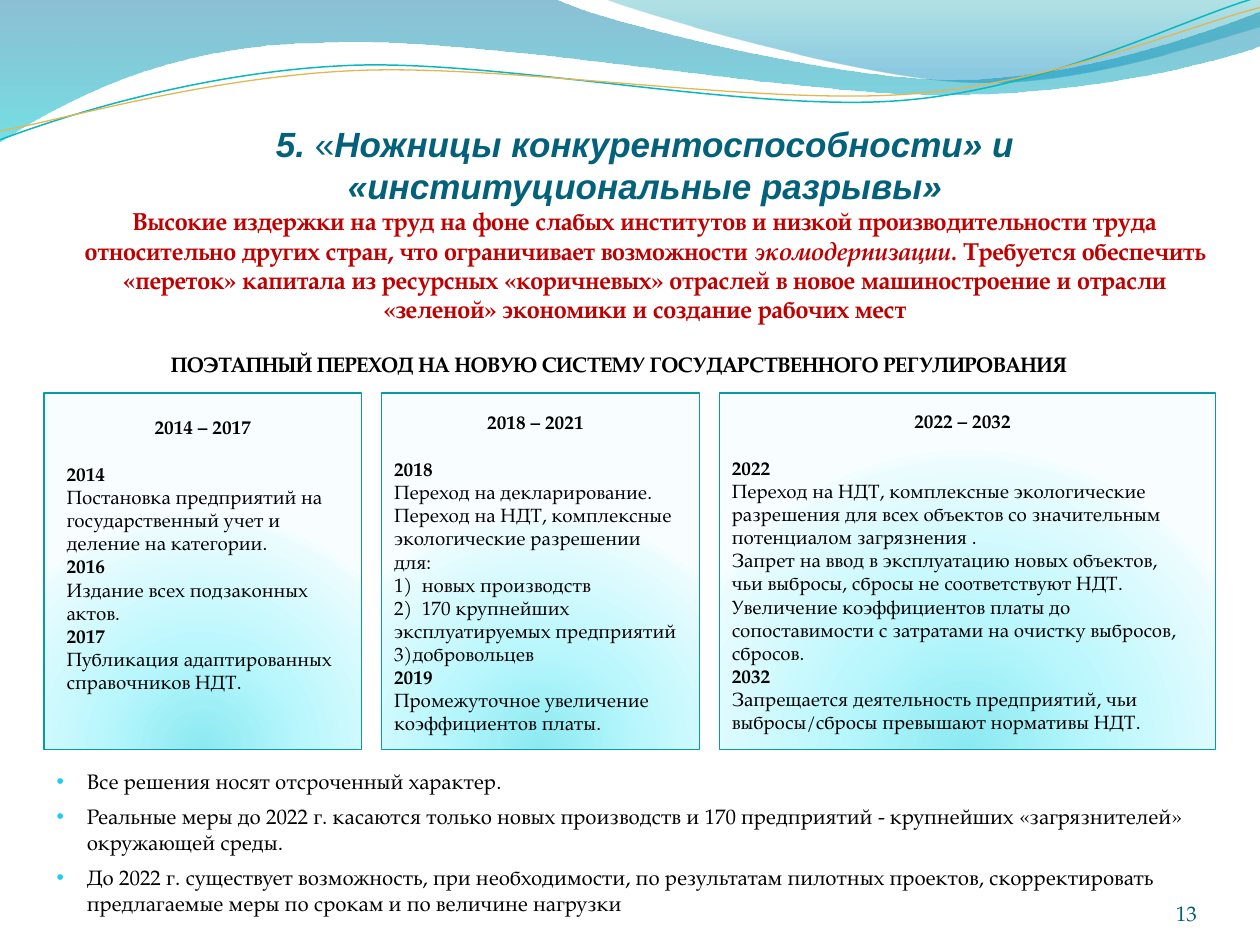
from lxml import etree
from pptx import Presentation
from pptx.dml.color import RGBColor
from pptx.enum.shapes import MSO_SHAPE
from pptx.enum.text import MSO_ANCHOR as Anchor, MSO_AUTO_SIZE as AutoSize, PP_ALIGN as Align
from pptx.oxml.ns import qn
from pptx.util import Inches, Pt

SERIF, SANS = "TeX Gyre Pagella", "Arial"
BLACK = RGBColor(0, 0, 0)
TITLE_BLUE = RGBColor(0x04, 0x61, 0x7B)
NUMBER_BLUE = RGBColor(0x04, 0x5D, 0x75)
RED = RGBColor(0xC0, 0, 0)
BORDER = RGBColor(0x06, 0x9C, 0xA3)
BULLET = RGBColor(0x20, 0xC9, 0xF8)
TEAL_LINE = RGBColor(0x0A, 0xB8, 0xBF)
GOLD_LINE = RGBColor(0xE3, 0xB6, 0x53)

# Gradient stops: position in percent, colour, opacity in percent
PANEL_STOPS = [(0, RGBColor(0x8B, 0xE9, 0xF1), 100), (43, RGBColor(0xB9, 0xF7, 0xFD), 100),
               (93, RGBColor(0xEA, 0xFC, 0xFE), 100), (100, RGBColor(0xF8, 0xFE, 0xFF), 100)]
LEFT_WAVE_STOPS = [(0, RGBColor(0, 0x74, 0xA1), 45), (100, RGBColor(0, 0xC6, 0xCF), 55)]
RIGHT_WAVE_STOPS = [(0, RGBColor(0, 0xA1, 0xA9), 30), (80, RGBColor(0, 0x8B, 0xBF), 45)]

# Outlines: a pair is a straight step, six numbers are a Bezier curve
LEFT_WAVE = [(0, -0.01), (4.4, -0.01), (4.76, 0.17, 6.64, 0.63, 7.58, 0.63),
             (8.53, 0.63, 9.58, 0.26, 10, 0.09), (10.01, 0.36),
             (9.83, 0.44, 8.7, 0.76, 7.46, 0.75), (6.22, 0.75, 3.82, 0.28, 2.57, 0.34),
             (1.29, 0.35, 0.46, 0.83, -0.01, 1.13)]
RIGHT_WAVE = [(4.79, -0.01), (5.09, 0.11, 6.82, 0.62, 7.69, 0.65),
              (8.56, 0.69, 9.61, 0.32, 10, 0.21), (10, 0)]
TEAL_CURVE = [(0, 1.11), (0.48, 0.93, 1.58, 0.57, 2.77, 0.52),
              (3.95, 0.47, 5.93, 0.89, 7.13, 0.8), (8.33, 0.71, 9.38, 0.15, 9.98, -0.02)]
GOLD_CURVE = [(0, 1.04), (0.47, 0.96, 1.64, 0.61, 2.83, 0.56),
              (4.03, 0.51, 5.97, 0.83, 7.17, 0.75), (8.36, 0.67, 9.41, 0.21, 10, 0.06)]

PANELS = [(5.71, 3.12, 3.94, 2.83), (3.03, 3.12, 2.52, 2.83), (0.35, 3.12, 2.52, 2.83)]
STAGES = [  # text box, period, {year: measures}
    ((0.43, 3.24, 2.36, 2.32), "2014 – 2017", {
        "2014": ["Постановка предприятий на государственный учет и деление на категории."],
        "2016": ["Издание всех подзаконных актов."],
        "2017": ["Публикация адаптированных справочников НДТ."]}),
    ((3.03, 3.2, 2.44, 2.69), "2018 – 2021", {
        "2018": ["Переход на декларирование.",
                 "Переход на НДТ, комплексные экологические разрешении для:",
                 "1)\tновых производств",
                 "2)\t170 крупнейших эксплуатируемых предприятий",
                 "3)добровольцев"],
        "2019": ["Промежуточное увеличение коэффициентов платы."]}),
    ((5.71, 3.19, 3.86, 2.69), "2022 – 2032", {
        "2022": ["Переход на НДТ, комплексные экологические разрешения для всех объектов "
                 "со значительным потенциалом загрязнения .",
                 "Запрет на ввод в эксплуатацию новых объектов, чьи выбросы, сбросы "
                 "не соответствуют НДТ.",
                 "Увеличение коэффициентов платы до сопоставимости с затратами "
                 "на очистку выбросов, сбросов."],
        "2032": ["Запрещается деятельность предприятий, чьи выбросы/сбросы "
                 "превышают нормативы НДТ."]}),
]
CONCLUSIONS = [
    "Все решения носят отсроченный характер.",
    "Реальные меры до 2022 г. касаются только новых производств и 170 предприятий - "
    "крупнейших «загрязнителей» окружающей среды.",
    "До 2022 г. существует возможность, при необходимости, по результатам пилотных проектов, "
    "скорректировать предлагаемые меры по срокам и по величине нагрузки",
]


def add_element(parent, tag, **attributes):
    return etree.SubElement(parent, qn(tag), {k: str(v) for k, v in attributes.items()})


def fill_gradient(shape, stops, radial=False):
    """Fill downwards, or radially from a point below the shape."""
    shape.fill.gradient()
    gradient = shape._element.spPr.find(qn("a:gradFill"))
    for child in list(gradient):
        gradient.remove(child)
    stop_list = add_element(gradient, "a:gsLst")
    for position, color, opacity in stops:
        stop = add_element(stop_list, "a:gs", pos=position * 1000)
        tint = add_element(stop, "a:srgbClr", val=color)
        if opacity < 100:
            add_element(tint, "a:alpha", val=opacity * 1000)
    if radial:
        center = add_element(gradient, "a:path", path="circle")
        add_element(center, "a:fillToRect", l=50000, t=130000, r=50000, b=-30000)
    else:
        add_element(gradient, "a:lin", ang=5400000, scaled=0)


def add_outline(page, outline, closed):
    """Lay straight steps through all points, then join each curve's three into one Bezier."""
    points = [(Inches(part[i]), Inches(part[i + 1]))
              for part in outline for i in range(0, len(part), 2)]
    builder = page.shapes.build_freeform(*points[0])
    builder.add_line_segments(points[1:], close=closed)
    shape = builder.convert_to_shape()
    shape.shadow.inherit = False
    steps = iter(list(shape._element.iter(qn("a:lnTo"))))
    for part in outline[1:]:
        group = [next(steps) for _ in range(len(part) // 2)]
        if len(group) == 3:
            curve = etree.Element(qn("a:cubicBezTo"))
            group[0].addprevious(curve)
            for step in group:
                curve.append(step[0])
                step.getparent().remove(step)
    return shape


def add_waves(page):
    for outline, stops in ((LEFT_WAVE, LEFT_WAVE_STOPS), (RIGHT_WAVE, RIGHT_WAVE_STOPS)):
        wave = add_outline(page, outline, closed=True)
        fill_gradient(wave, stops)
        wave.line.fill.background()
    for outline, color, width in ((TEAL_CURVE, TEAL_LINE, 0.85), (GOLD_CURVE, GOLD_LINE, 0.75)):
        curve = add_outline(page, outline, closed=False)
        curve.fill.background()
        curve.line.color.rgb = color
        curve.line.width = Pt(width)


def add_box(page, box, anchor=Anchor.MIDDLE, insets=(0.1, 0.05, 0.1, 0.05), grow=True):
    frame = page.shapes.add_textbox(*map(Inches, box)).text_frame
    frame.word_wrap = True
    frame.auto_size = AutoSize.SHAPE_TO_FIT_TEXT if grow else AutoSize.NONE
    frame.vertical_anchor = anchor
    frame.margin_left, frame.margin_top, frame.margin_right, frame.margin_bottom = map(
        Inches, insets)
    return frame


def add_para(frame, align=Align.LEFT, before=0):
    first = frame.paragraphs[0]
    para = frame.add_paragraph() if first.runs else first
    para.alignment = align
    para.space_before = Pt(before)
    return para


def write(para, text, size=12, font=SERIF, color=BLACK, bold=False, italic=False):
    span = para.add_run()
    span.text = text
    span.font.size, span.font.name = Pt(size), font
    span.font.color.rgb = color
    span.font.bold, span.font.italic = bold, italic


def add_title(page, box):
    frame = add_box(page, box, Anchor.BOTTOM, (0, 0.05, 0, 0), grow=False)
    para = add_para(frame, Align.CENTER)
    heading = dict(size=20, font=SANS, color=TITLE_BLUE)
    write(para, "5. ", bold=True, italic=True, **heading)
    write(para, "«", **heading)
    write(para, "Ножницы конкурентоспособности» и «институциональные разрывы»",
          bold=True, italic=True, **heading)
    para.add_line_break()
    thesis = dict(size=14, color=RED, bold=True)
    write(para, "Высокие издержки на труд на фоне слабых институтов и низкой производительности "
          "труда относительно других стран, что ограничивает возможности ", **thesis)
    write(para, "экомодернизации. ", italic=True, **thesis)
    write(para, "Требуется обеспечить «переток» капитала из ресурсных «коричневых» отраслей в "
          "новое машиностроение и отрасли «зеленой» экономики и создание рабочих мест", **thesis)


def add_panel(page, box):
    panel = page.shapes.add_shape(MSO_SHAPE.RECTANGLE, *map(Inches, box))
    panel.shadow.inherit = False
    fill_gradient(panel, PANEL_STOPS, radial=True)
    panel.line.color.rgb = BORDER
    panel.line.width = Pt(0.75)


def add_stage(page, box, period, measures):
    frame = add_box(page, box)
    write(add_para(frame, Align.CENTER), period, size=11, bold=True)
    for index, (year, lines) in enumerate(measures.items()):
        write(add_para(frame, before=0 if index else 13.5), year, size=11, bold=True)
        for line in lines:
            para = add_para(frame)
            if "\t" in line:
                tabs = add_element(para._p.get_or_add_pPr(), "a:tabLst")
                add_element(tabs, "a:tab", pos=Inches(0.22), algn="l")
            write(para, line, size=11)


def add_conclusions(page, box):
    frame = add_box(page, box)
    for index, text in enumerate(CONCLUSIONS):
        para = add_para(frame, before=6 if index else 0)
        props = para._p.get_or_add_pPr()
        props.set("marL", str(Inches(0.24)))
        props.set("indent", str(Inches(-0.24)))
        add_element(add_element(props, "a:buClr"), "a:srgbClr", val=BULLET)
        add_element(props, "a:buFont", typeface=SANS)
        add_element(props, "a:buChar", char="•")
        write(para, text)


def main():
    deck = Presentation()
    deck.slide_width, deck.slide_height = Inches(10), Inches(7.5)
    page = deck.slides.add_slide(deck.slide_layouts[6])
    add_waves(page)
    for box in PANELS:
        add_panel(page, box)
    add_title(page, (0.67, 0.84, 8.9, 1.73))
    number = add_box(page, (8.67, 6.95, 0.83, 0.4), Anchor.BOTTOM, (0, 0, 0, 0), grow=False)
    write(add_para(number, Align.RIGHT), "13", color=NUMBER_BLUE)
    write(add_para(add_box(page, (0.27, 2.74, 9.29, 0.3)), Align.CENTER),
          "ПОЭТАПНЫЙ ПЕРЕХОД НА НОВУЮ СИСТЕМУ ГОСУДАРСТВЕННОГО РЕГУЛИРОВАНИЯ", bold=True)
    for stage in STAGES:
        add_stage(page, *stage)
    add_conclusions(page, (0.35, 6.04, 9.29, 1.28))
    deck.save("out.pptx")


if __name__ == "__main__":
    main()
